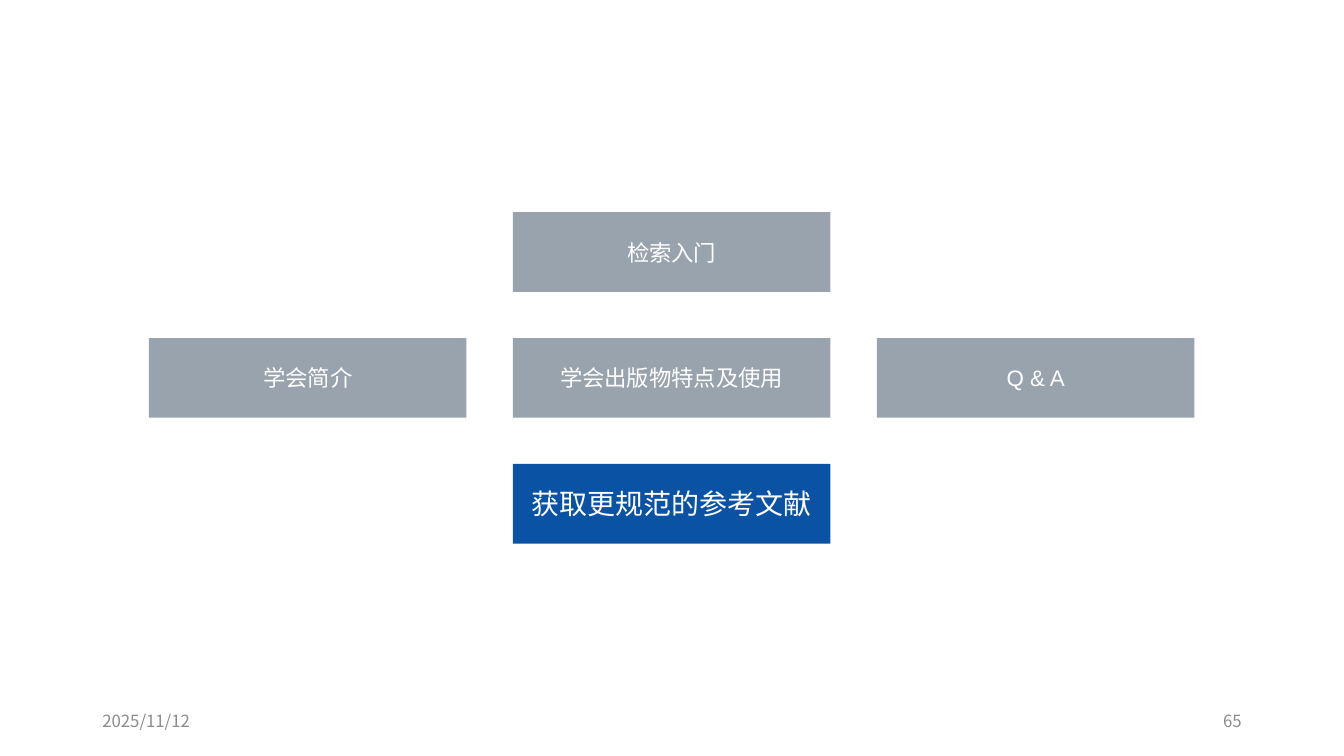
from dataclasses import dataclass

from pptx import Presentation
from pptx.dml.color import RGBColor
from pptx.enum.shapes import MSO_SHAPE
from pptx.enum.text import MSO_ANCHOR, PP_ALIGN
from pptx.oxml.ns import qn
from pptx.slide import Slide
from pptx.text.text import TextFrame
from pptx.util import Pt

WHITE = RGBColor(0xFF, 0xFF, 0xFF)
GREY = RGBColor(0x99, 0xA3, 0xAD)
BLUE = RGBColor(0x0A, 0x52, 0xA3)
FOOTER_GREY = RGBColor(0x8C, 0x8C, 0x8C)
LATIN, CJK = "Arial", "Noto Sans CJK SC"

# Grid of topic boxes, in points
LEFT, TOP = 106.4, 151.6
COL_STEP, ROW_STEP = 260, 89.9
BOX_W, BOX_H = 226.8, 56.9


@dataclass(frozen=True)
class Topic:
    text: str
    col: int
    row: int
    fill: RGBColor = GREY
    size: int = 16


@dataclass(frozen=True)
class Footer:
    text: str
    left: float
    align: PP_ALIGN


TOPICS = [
    Topic("学会简介", 0, 1),
    Topic("检索入门", 1, 0),
    Topic("学会出版物特点及使用", 1, 1),
    Topic("获取更规范的参考文献", 1, 2, BLUE, 20),
    Topic("Q & A", 2, 1),
]
FOOTERS = [
    Footer("2025/11/12", 66, PP_ALIGN.LEFT),
    Footer("65", 678, PP_ALIGN.RIGHT),
]


def write(tf: TextFrame, text: str, align: PP_ALIGN, color: RGBColor, formats: dict) -> None:
    tf.word_wrap = True
    tf.vertical_anchor = MSO_ANCHOR.MIDDLE
    p = tf.paragraphs[0]
    p.alignment = align
    r = p.add_run()
    r.text = text
    for name, value in formats.items():
        setattr(r.font, name, value)
    r.font.color.rgb = color
    # East Asian typeface
    ea = r.font._element.makeelement(qn("a:ea"), {"typeface": CJK})
    r.font._element.append(ea)


def draw_topic(s: Slide, topic: Topic) -> None:
    sp = s.shapes.add_shape(
        MSO_SHAPE.RECTANGLE,
        Pt(LEFT + topic.col * COL_STEP), Pt(TOP + topic.row * ROW_STEP),
        Pt(BOX_W), Pt(BOX_H),
    )
    sp.shadow.inherit = False
    sp.fill.solid()
    sp.fill.fore_color.rgb = topic.fill
    sp.line.fill.background()
    write(sp.text_frame, topic.text, PP_ALIGN.CENTER, WHITE,
          {"size": Pt(topic.size), "name": LATIN})


def draw_footer(s: Slide, footer: Footer) -> None:
    sp = s.shapes.add_textbox(Pt(footer.left), Pt(500.5), Pt(216), Pt(28.75))
    write(sp.text_frame, footer.text, footer.align, FOOTER_GREY,
          {"size": Pt(12), "name": CJK})


def main() -> None:
    prs = Presentation()
    prs.slide_width, prs.slide_height = Pt(960), Pt(540)
    s = prs.slides.add_slide(prs.slide_layouts[6])

    # Outline of the talk, current topic in blue
    for topic in TOPICS:
        draw_topic(s, topic)

    # Date and page number
    for footer in FOOTERS:
        draw_footer(s, footer)

    prs.save("out.pptx")


if __name__ == "__main__":
    main()
